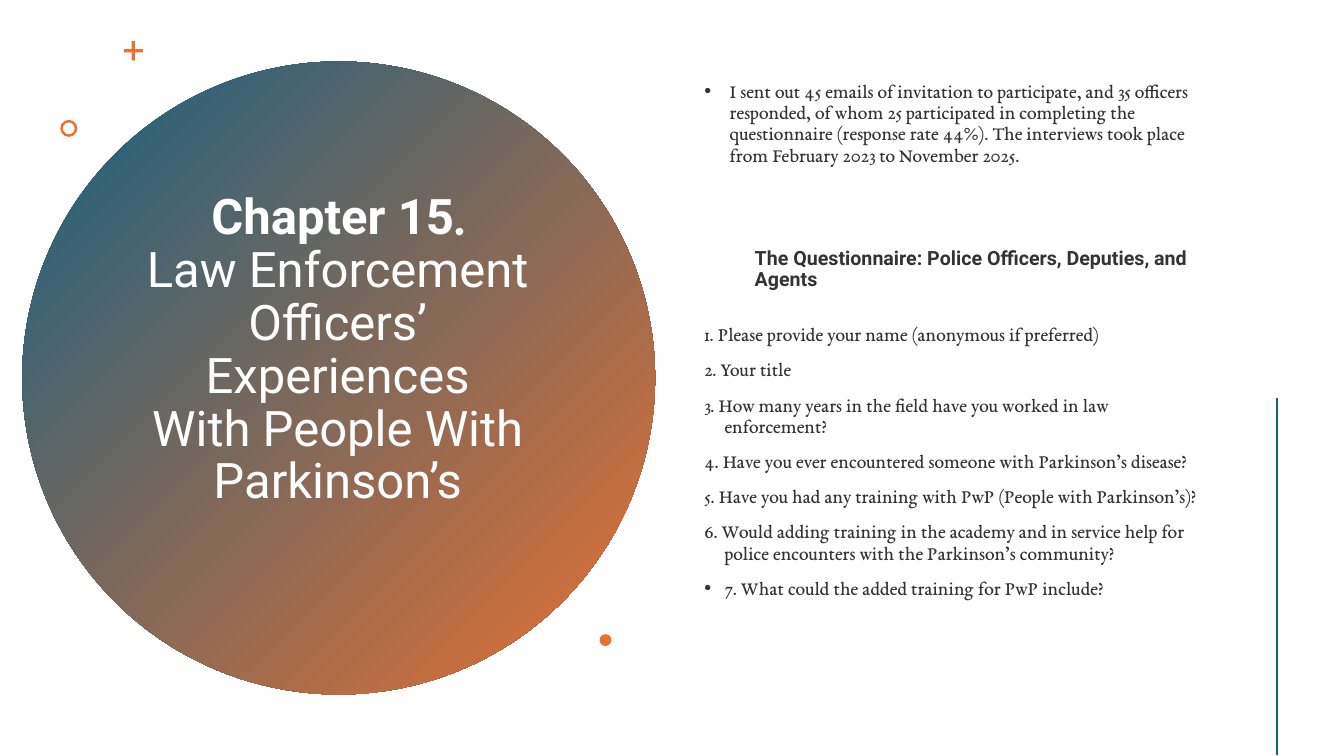
from pptx import Presentation
from pptx.dml.color import RGBColor
from pptx.enum import shapes, text
from pptx.oxml.ns import qn
from pptx.util import Cm, Pt
from lxml import etree

BLUE, ORANGE, WHITE, INK = "156082", "E97132", "FFFFFF", "333333"
SERIF, SANS = "EB Garamond", "Roboto"

# text, font, bold; a line break follows each newline
TITLE = [
    ("Chapter 15", SANS, True),
    (".\n", SERIF, True),
    ("Law Enforcement Officers’ Experiences\nWith People With Parkinson’s", SANS, False),
]
INTRO = ("I sent out 45 emails of invitation to participate, and 35 officers responded, "
         "of whom 25 participated in completing the questionnaire (response rate 44%). "
         "The interviews took place from February 2023 to November 2025.")
HEAD = "The Questionnaire: Police Officers, Deputies, and Agents"
ASKS = [
    "Please provide your name (anonymous if preferred)",
    "Your title",
    "How many years in the field have you worked in law enforcement?",
    "Have you ever encountered someone with Parkinson’s disease?",
    "Have you had any training with PwP (People with Parkinson’s)?",
    "Would adding training in the academy and in service help for police "
    "encounters with the Parkinson’s community?",
    "What could the added training for PwP include?",
]

# preset, left, top, size, adjustment
KIND = shapes.MSO_SHAPE
MARKS = [
    (KIND.CROSS, 3.12, 1.04, 0.48, 0.42),
    (KIND.DONUT, 1.52, 3.02, 0.43, 0.15),
    (KIND.OVAL, 15.11, 15.98, 0.3, None),
]
DISC = (0.56, 1.55, 15.95)
TITLE_BOX = (3.45, 3.58, 10.13, 10.52)
BODY_BOX = (17.5, 1.93, 13.26, 13.6)
RULE = (32.18, 10.03, 32.18, 19.02)


def tint(code):
    return RGBColor.from_string(code)


def put(obj, form):
    """Set each attribute named in form."""
    for name, value in form.items():
        setattr(obj, name, value)


def mark(kind, left, top, size):
    """Add a square-framed preset shape with no line or shadow."""
    item = slide.shapes.add_shape(kind, Cm(left), Cm(top), Cm(size), Cm(size))
    item.shadow.inherit = False
    item.line.fill.background()
    return item


def frame(box, anchor):
    """Add a wrapping text box and give its text frame."""
    area = slide.shapes.add_textbox(*map(Cm, box)).text_frame
    put(area, {"word_wrap": True, "vertical_anchor": anchor})
    return area


def write(para, words, font, bold, size, code):
    for i, part in enumerate(words.split("\n")):
        if i:
            para.add_line_break()
        if part:
            run = para.add_run()
            run.text = part
            put(run.font, {"name": font, "bold": bold, "size": Pt(size)})
            run.font.color.rgb = tint(code)


def indent(para, left, hang, dot):
    """Set the indents in centimetres and, if dot, a bullet."""
    props = para._p.get_or_add_pPr()
    props.set("marL", str(Cm(left)))
    props.set("indent", str(-Cm(hang)))
    if dot:
        etree.SubElement(props, qn("a:buFont")).set("typeface", "Arial")
        etree.SubElement(props, qn("a:buChar")).set("char", "•")


deck = Presentation()
put(deck, {"slide_width": Cm(33.87), "slide_height": Cm(19.05)})
slide = deck.slides.add_slide(deck.slide_layouts[6])

disc = mark(KIND.OVAL, *DISC)
disc.fill.gradient()
disc.fill.gradient_angle = 315
for stop, code, place in zip(disc.fill.gradient_stops, (BLUE, ORANGE), (0, 1)):
    stop.color.rgb = tint(code)
    stop.position = place

para = frame(TITLE_BOX, text.MSO_ANCHOR.MIDDLE).paragraphs[0]
put(para, {"alignment": text.PP_ALIGN.CENTER, "line_spacing": 0.9})
for words, font, bold in TITLE:
    write(para, words, font, bold, 35, WHITE)

for kind, left, top, size, adjust in MARKS:
    item = mark(kind, left, top, size)
    item.fill.solid()
    item.fill.fore_color.rgb = tint(ORANGE)
    if adjust:
        item.adjustments[0] = adjust

# words, font, bold, space before, space after, left, hang, bullet
rows = [(INTRO, SERIF, False, 0, 0, 0.64, 0.64, True),
        (HEAD, SANS, True, 58.5, 14.4, 1.27, 0, False)]
for n, ask in enumerate(ASKS, 1):
    rows.append((f"{n}. {ask}", SERIF, False, 10, 0, 0.51, 0.51, n == len(ASKS)))

body = frame(BODY_BOX, text.MSO_ANCHOR.TOP)
for i, (words, font, bold, above, below, left, hang, dot) in enumerate(rows):
    para = body.add_paragraph() if i else body.paragraphs[0]
    put(para, {"line_spacing": 0.9, "space_before": Pt(above), "space_after": Pt(below)})
    indent(para, left, hang, dot)
    write(para, words, font, bold, 14, INK)

rule = slide.shapes.add_connector(shapes.MSO_CONNECTOR.STRAIGHT, *map(Cm, RULE))
rule.line.color.rgb = tint(BLUE)
rule.line.width = Pt(2)
etree.SubElement(rule._element.spPr, qn("a:effectLst"))

deck.save("out.pptx")
